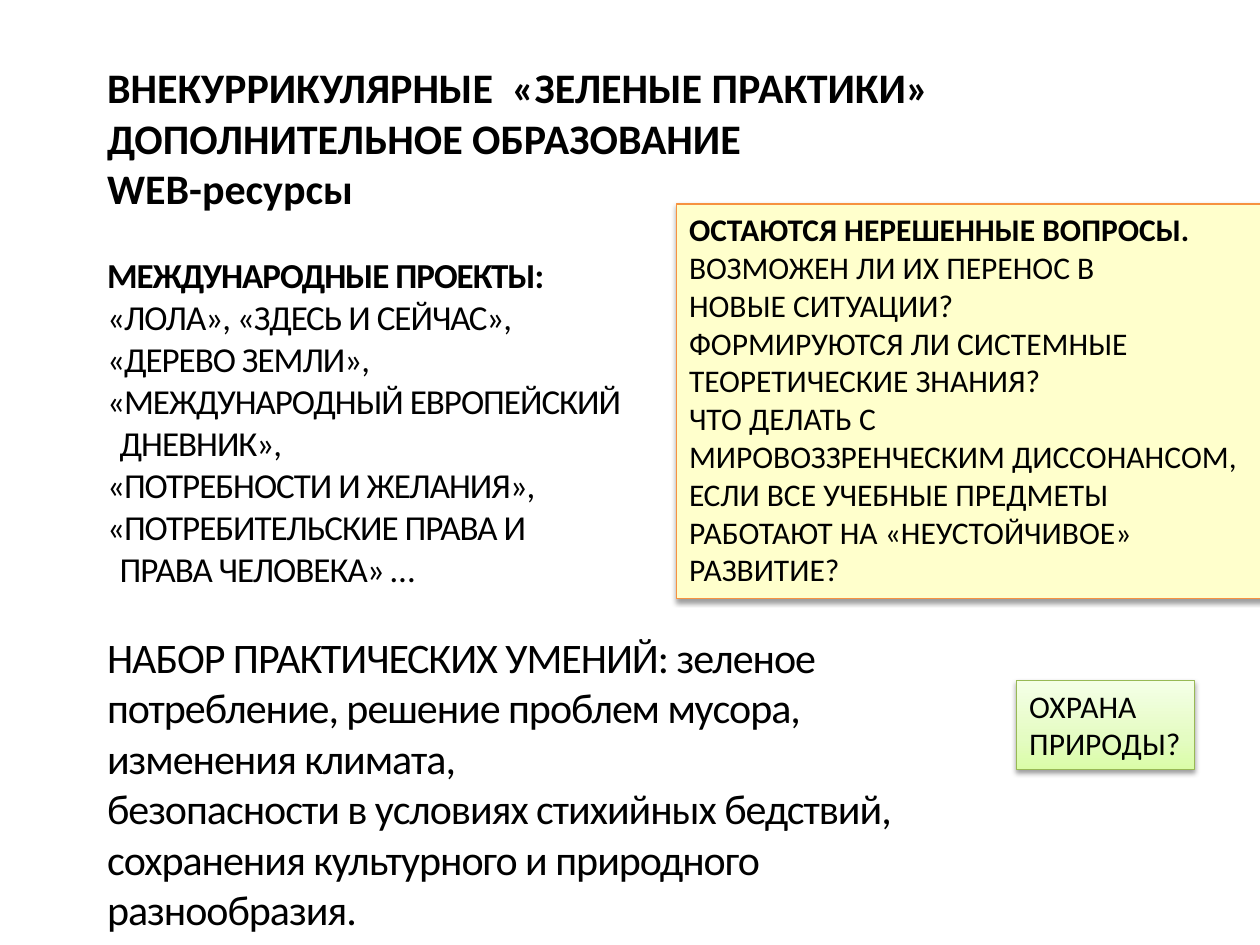
"""Build a slide on extracurricular green practices and open questions."""
from copy import deepcopy

from lxml import etree
from pptx import Presentation
from pptx.dml.color import RGBColor
from pptx.enum.shapes import MSO_SHAPE
from pptx.enum.text import MSO_ANCHOR, PP_ALIGN
from pptx.oxml.ns import qn
from pptx.util import Inches, Pt

RECTANGLE = MSO_SHAPE.RECTANGLE
TOP = MSO_ANCHOR.TOP
LEFT = PP_ALIGN.LEFT

TITLE = [
    "ВНЕКУРРИКУЛЯРНЫЕ  «ЗЕЛЕНЫЕ ПРАКТИКИ»",
    "ДОПОЛНИТЕЛЬНОЕ ОБРАЗОВАНИЕ",
    "WEB-ресурсы",
]
PROJECTS_HEADING = "МЕЖДУНАРОДНЫЕ ПРОЕКТЫ:"
PROJECTS = [
    ("«ЛОЛА», «ЗДЕСЬ И СЕЙЧАС»,", 0),
    ("«ДЕРЕВО ЗЕМЛИ»,", 0),
    ("«МЕЖДУНАРОДНЫЙ ЕВРОПЕЙСКИЙ", 0),
    ("ДНЕВНИК»,", 0.1),
    ("«ПОТРЕБНОСТИ И ЖЕЛАНИЯ»,", 0),
    ("«ПОТРЕБИТЕЛЬСКИЕ ПРАВА И", 0),
    ("ПРАВА ЧЕЛОВЕКА» …", 0.1),
]
SKILLS = [
    "НАБОР ПРАКТИЧЕСКИХ УМЕНИЙ: зеленое потребление, решение проблем мусора, "
    "изменения климата,",
    "безопасности в условиях стихийных бедствий,",
    "сохранения культурного и природного",
    "разнообразия.",
]
QUESTIONS_HEADING = "ОСТАЮТСЯ НЕРЕШЕННЫЕ ВОПРОСЫ."
QUESTIONS = [
    "ВОЗМОЖЕН ЛИ ИХ ПЕРЕНОС В",
    "НОВЫЕ СИТУАЦИИ?",
    "ФОРМИРУЮТСЯ ЛИ СИСТЕМНЫЕ",
    "ТЕОРЕТИЧЕСКИЕ ЗНАНИЯ?",
    "ЧТО ДЕЛАТЬ С",
    "МИРОВОЗЗРЕНЧЕСКИМ ДИССОНАНСОМ,",
    "ЕСЛИ ВСЕ УЧЕБНЫЕ ПРЕДМЕТЫ",
    "РАБОТАЮТ НА «НЕУСТОЙЧИВОЕ»",
    "РАЗВИТИЕ?",
]
NATURE = ["ОХРАНА", "ПРИРОДЫ?"]


def rgb(color):
    """Turn a hex string into a colour."""
    return RGBColor.from_string(color)


def add_text(tf, text, size=18, bold=False, spacing=None, indent=0, before=0):
    """Write one left-aligned paragraph, using the empty first one if free."""
    p = tf.paragraphs[0] if not tf.text else tf.add_paragraph()
    p.alignment = LEFT
    p.space_before = Pt(before)
    pPr = p._p.get_or_add_pPr()
    pPr.set("marL", str(Inches(indent)))
    pPr.set("indent", "0")
    etree.SubElement(pPr, qn("a:buNone"))
    r = p.add_run()
    r.text = text
    r.font.name = "Calibri"
    r.font.size = Pt(size)
    r.font.bold = bold
    r.font.color.rgb = rgb("000000")
    if spacing:
        r.font._element.set("spc", str(round(spacing * 100)))


def place(sp, left, top, width, height, wrap=True):
    """Move a shape and return its top-anchored text frame."""
    sp.left, sp.top = Inches(left), Inches(top)
    sp.width, sp.height = Inches(width), Inches(height)
    tf = sp.text_frame
    tf.word_wrap = wrap
    tf.vertical_anchor = TOP
    return tf


def add_shadow(sp):
    """Give a shape a soft shadow that falls downwards."""
    sp.shadow.inherit = False
    effects = sp._element.spPr.find(qn("a:effectLst"))
    shadow = etree.SubElement(
        effects, qn("a:outerShdw"), blurRad=str(Pt(3.1)), dist=str(Pt(1.6)),
        dir="5400000", rotWithShape="0")
    color = etree.SubElement(shadow, qn("a:srgbClr"), val="000000")
    etree.SubElement(color, qn("a:alpha"), val="38000")


def fill_gradient(sp, stops):
    """Fill a shape from bottom to top with (position, colour) stops."""
    sp.fill.gradient()
    sp.fill.gradient_angle = 90
    stop_list = sp._element.spPr.find(qn("a:gradFill")).find(qn("a:gsLst"))
    while len(stop_list) < len(stops):
        stop_list.append(deepcopy(stop_list[0]))
    for stop, (position, color) in zip(sp.fill.gradient_stops, stops):
        stop.position = position
        stop.color.rgb = rgb(color)


def add_box(s, left, top, width, height, line):
    """Add a shadowed rectangle with a thin outline."""
    sp = s.shapes.add_shape(RECTANGLE, 0, 0, 0, 0)
    place(sp, left, top, width, height, wrap=False)
    sp.line.color.rgb = rgb(line)
    sp.line.width = Pt(0.75)
    add_shadow(sp)
    return sp


def main():
    """Build and save the slide."""
    prs = Presentation()
    prs.slide_width, prs.slide_height = Inches(10), Inches(7.5)
    s = prs.slides.add_slide(prs.slide_layouts[1])

    tf = place(s.shapes.title, 0.75, 0.44, 6.84, 1.62, wrap=False)
    for text in TITLE:
        add_text(tf, text, size=24, bold=True)

    tf = place(s.placeholders[1], 0.75, 1.96, 7.09, 5.55)
    add_text(tf, PROJECTS_HEADING, size=20, bold=True, spacing=-0.6)
    for text, indent in PROJECTS:
        add_text(tf, text, size=20, spacing=-0.6, indent=indent)
    for i, text in enumerate(SKILLS):
        add_text(tf, text, size=24, spacing=-0.6, before=0 if i else 24)

    nature = add_box(s, 8.07, 5.4, 1.41, 0.71, line="98B955")
    fill_gradient(nature, [(0, "DAFDA7"), (0.35, "E4FCC2"), (1, "F5FFE7")])
    for text in NATURE:
        add_text(nature.text_frame, text)

    questions = add_box(s, 5.37, 1.62, 4.65, 3.13, line="F69240")
    questions.fill.solid()
    questions.fill.fore_color.rgb = rgb("FFFFCC")
    add_text(questions.text_frame, QUESTIONS_HEADING, bold=True)
    for text in QUESTIONS:
        add_text(questions.text_frame, text)

    prs.save("out.pptx")


if __name__ == "__main__":
    main()
